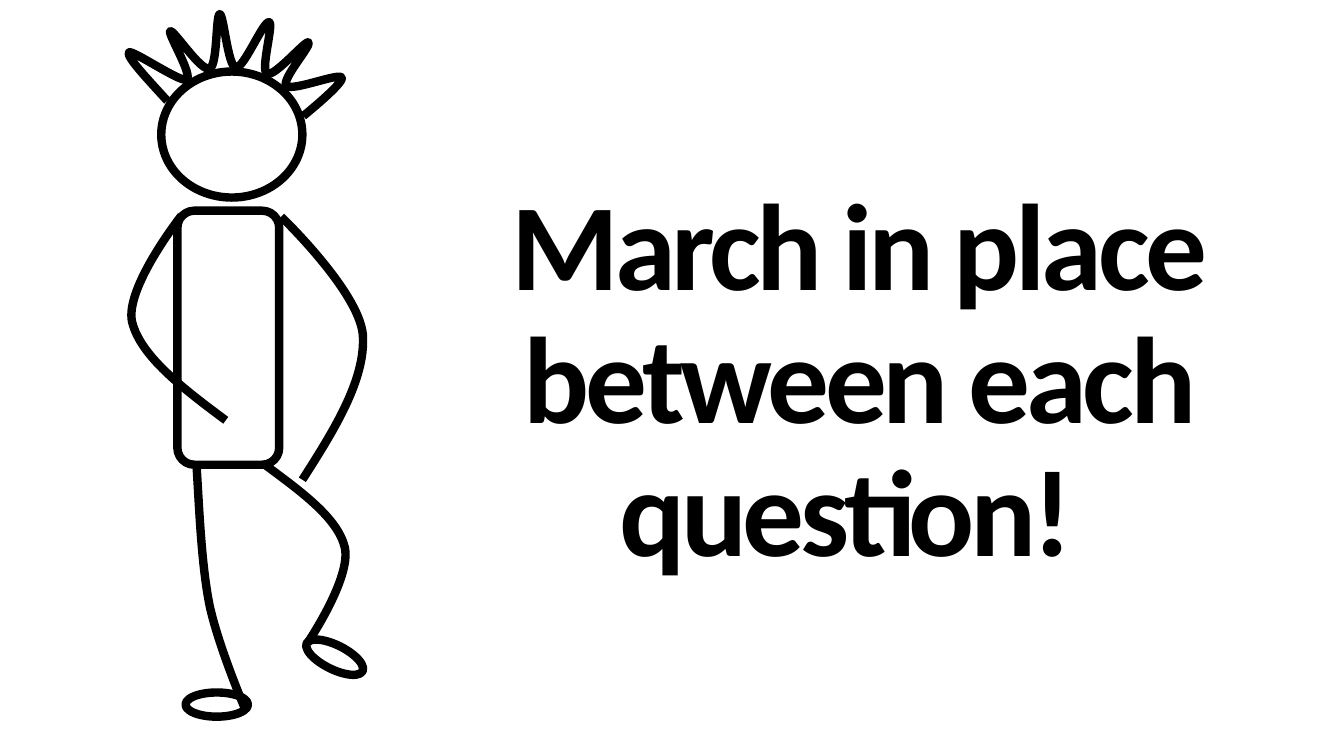
from typing import NamedTuple

from lxml import etree
from pptx import Presentation, util as u
from pptx.dml.color import RGBColor
from pptx.enum import shapes, text
from pptx.oxml.ns import qn

CELL = u.Inches(0.1)  # side of one square of the drawing grid
COLUMNS, ROWS = 133.33, 75
INK = "000000"
STROKE = u.Pt(6)

Point = tuple[float, float]


class BodyPart(NamedTuple):
    """A preset shape placed in grid columns and rows."""
    preset: shapes.MSO_SHAPE
    left: float
    top: float
    width: float
    height: float
    rotation: float = 0


class Stroke(NamedTuple):
    """A chain of Bézier curves: a start, then three points per curve."""
    start: Point
    curve_points: list[Point]


BODY_PARTS = [
    BodyPart(shapes.MSO_SHAPE.ROUNDED_RECTANGLE, 17.6, 20.9, 10.1, 25.2),  # torso
    BodyPart(shapes.MSO_SHAPE.OVAL, 16, 7.1, 14, 12.5),  # head
    BodyPart(shapes.MSO_SHAPE.OVAL, 18.4, 68.7, 6.2, 2.4),  # standing foot
    BodyPart(shapes.MSO_SHAPE.OVAL, 30.1, 64, 6.2, 2.4, 26.5),  # raised foot
]

HAIR = Stroke((16.6, 10), [
    (14.6, 7.8), (12.5, 5.6), (12.8, 5.2),
    (13.1, 4.9), (17.9, 8.2), (18.5, 7.9),
    (19.2, 7.5), (16.6, 3.3), (16.9, 3.1),
    (17.3, 3), (19.9, 7.1), (20.8, 6.8),
    (21.6, 6.5), (21.4, 1.5), (21.8, 1.4),
    (22.2, 1.4), (22.6, 6.6), (23.4, 6.7),
    (24.2, 6.8), (26.1, 2.1), (26.7, 2.2),
    (27.2, 2.3), (25.8, 7), (26.5, 7.3),
    (27.2, 7.7), (30.3, 4), (30.6, 4.2),
    (31, 4.4), (27.9, 7.9), (28.4, 8.5),
    (29, 9.1), (33.6, 7.2), (33.9, 7.7),
    (34.2, 8.2), (30.1, 11.5), (30.1, 11.5),
])
STANDING_LEG = Stroke((19.5, 46.2), [
    (19.8, 51.1), (20, 56.1), (20.8, 60.1),
    (21.7, 64.2), (24.3, 70.3), (24.3, 70.3),
])
RAISED_LEG = Stroke((26.4, 46.2), [
    (29.9, 48.8), (33.5, 51.4), (34.2, 54.3),
    (34.9, 57.3), (30.5, 63.8), (30.5, 63.8),
])
BENT_ARM = Stroke((22.4, 41.7), [
    (18.1, 38.5), (13.9, 35.3), (13.1, 31.9),
    (12.4, 28.5), (18, 21.4), (18, 21.4),
])
HANGING_ARM = Stroke((30, 47.6), [
    (33.2, 42.6), (36.3, 37.6), (36, 33.2),
    (35.6, 28.9), (27.9, 21.5), (27.9, 21.5),
])
STROKES = [HAIR, STANDING_LEG, RAISED_LEG, BENT_ARM, HANGING_ARM]


def grid(cells: float) -> u.Emu:
    return u.Emu(round(cells * CELL))


def colour(hex_value: str) -> RGBColor:
    return RGBColor.from_string(hex_value)


def outline(shape) -> None:
    """Leave only a thick line on the shape."""
    shape.shadow.inherit = False
    shape.fill.background()
    shape.line.color.rgb = colour(INK)
    shape.line.width = STROKE


def draw_body_part(figure, part: BodyPart) -> None:
    shape = figure.shapes.add_shape(
        part.preset, *map(grid, (part.left, part.top, part.width, part.height)))
    shape.rotation = part.rotation
    outline(shape)


def draw_stroke(figure, stroke: Stroke) -> None:
    """Draw straight segments, then merge each three into one curve."""
    builder = figure.shapes.build_freeform(*map(grid, stroke.start))
    builder.add_line_segments(
        [(grid(x), grid(y)) for x, y in stroke.curve_points], close=False)
    shape = builder.convert_to_shape()
    segments = list(shape._element.iter(qn("a:lnTo")))
    for first in range(0, len(segments), 3):
        curve = etree.Element(qn("a:cubicBezTo"))
        segments[first].addprevious(curve)
        for segment in segments[first:first + 3]:
            curve.append(segment[0])
            segment.getparent().remove(segment)
    outline(shape)


def add_instruction(slide, wording: str) -> None:
    box = slide.shapes.add_textbox(*map(grid, (42.7, 3.2, 84.8, 69.7)))
    frame = box.text_frame
    frame.word_wrap = True
    frame.vertical_anchor = text.MSO_ANCHOR.MIDDLE
    frame.margin_left = frame.margin_right = u.Inches(0.13)
    frame.margin_top = frame.margin_bottom = u.Inches(0.07)
    paragraph = frame.paragraphs[0]
    paragraph.alignment = text.PP_ALIGN.CENTER
    paragraph.line_spacing = 0.9
    paragraph.font.name = "Calibri"
    paragraph.font.size = u.Pt(88)
    paragraph.font.bold = True
    paragraph.font.color.rgb = colour(INK)
    run = paragraph.add_run()
    run.text = wording
    run.font._element.set("spc", "-300")


def main() -> None:
    presentation = Presentation()
    presentation.slide_width = grid(COLUMNS)
    presentation.slide_height = grid(ROWS)
    slide = presentation.slides.add_slide(presentation.slide_layouts[6])
    figure = slide.shapes.add_group_shape()
    for part in BODY_PARTS:
        draw_body_part(figure, part)
    for stroke in STROKES:
        draw_stroke(figure, stroke)
    add_instruction(slide, "March in place between each question! ")
    presentation.save("out.pptx")


if __name__ == "__main__":
    main()
